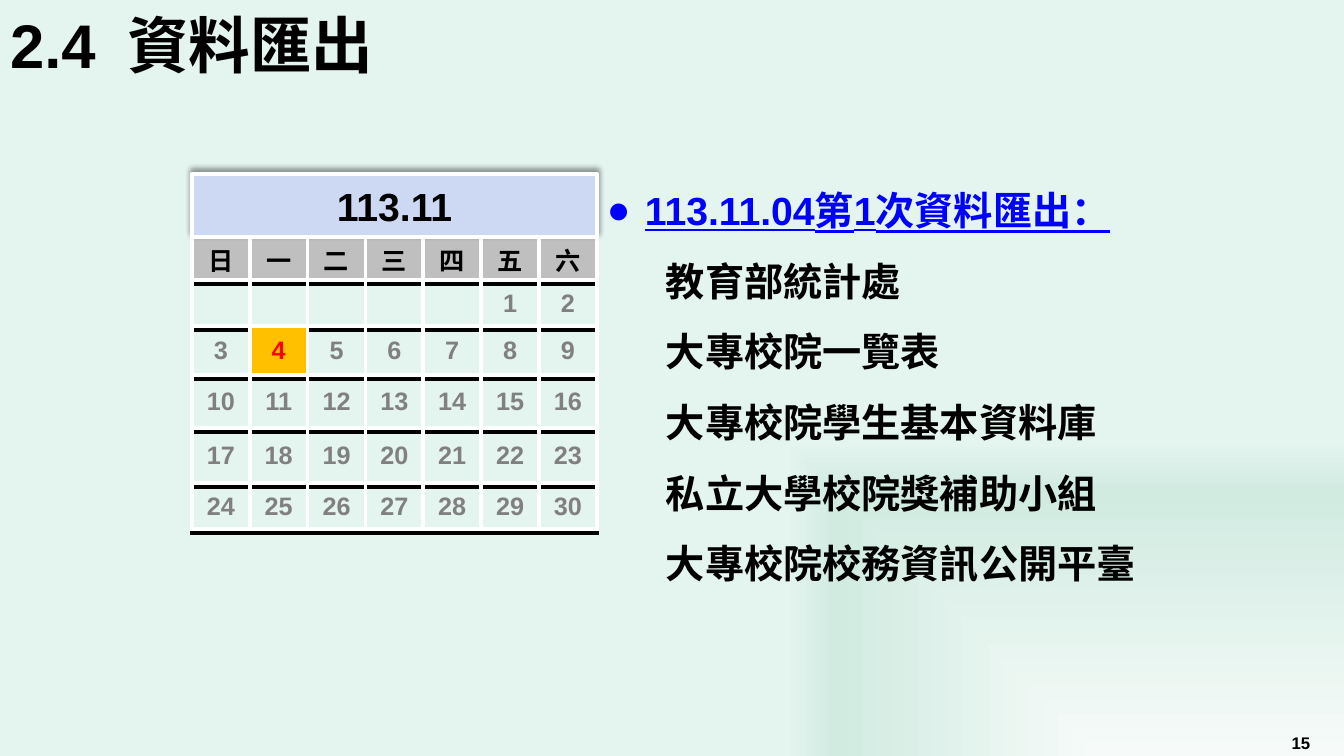
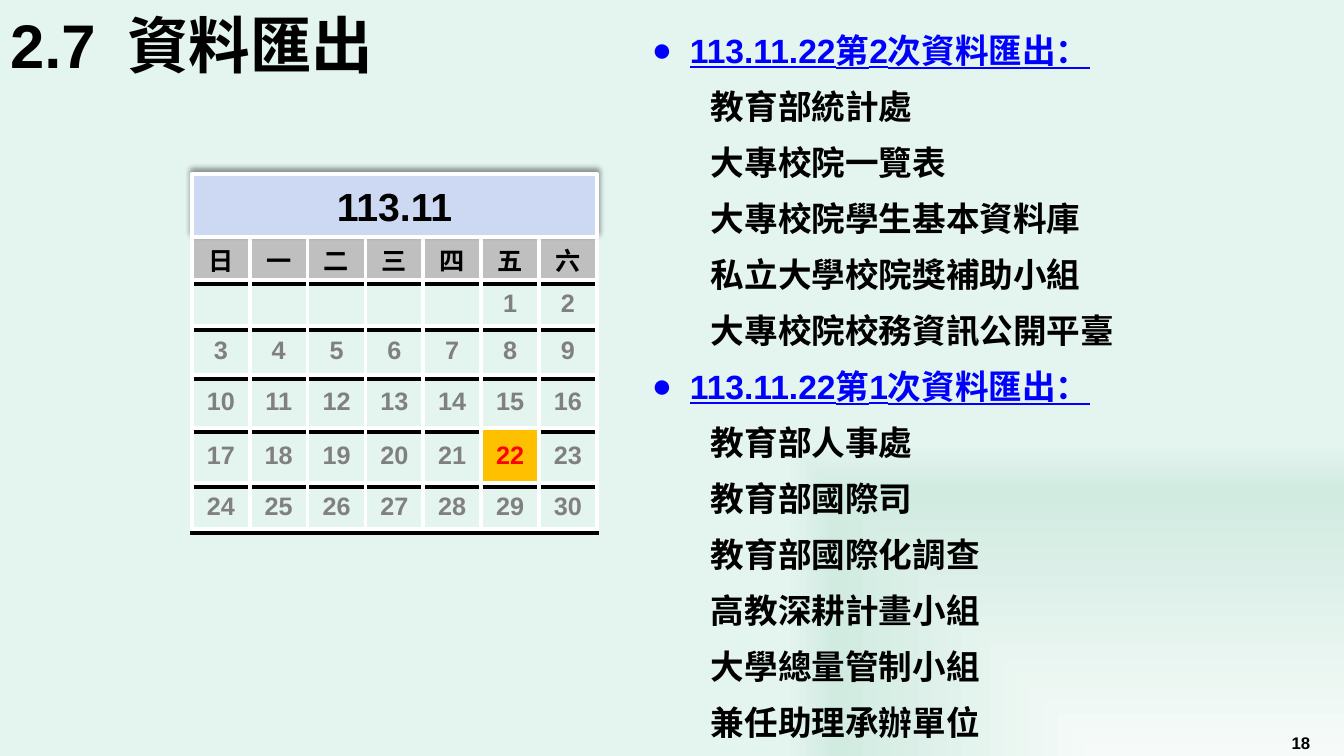
"""Build two export-schedule slides, each with a calendar and a list."""
import pptx
import pptx.dml.color
import pptx.enum.shapes
import pptx.enum.text
import pptx.oxml
import pptx.util

ALIGN = pptx.enum.text.PP_ALIGN
MIDDLE = pptx.enum.text.MSO_ANCHOR.MIDDLE
NS = 'xmlns:a="http://schemas.openxmlformats.org/drawingml/2006/main"'
UNIT = 914400 / 100.8


def px(num):
    return pptx.util.Emu(round(num * UNIT))


def tint(code):
    return pptx.dml.color.RGBColor.from_string(code)


def node(tag, attrs="", body=""):
    return pptx.oxml.parse_xml(f"<a:{tag} {NS} {attrs}>{body}</a:{tag}>")


def shade(blur, dist, angle, alpha):
    return node(
        "outerShdw",
        f'blurRad="{blur}" dist="{dist}" dir="{angle}" algn="t" rotWithShape="0"',
        f'<a:srgbClr val="000000"><a:alpha val="{alpha}"/></a:srgbClr>')


class Deck:
    LATIN, ASIAN = "Arial", "Noto Sans CJK SC"
    BLACK, WHITE, GREY = "000000", "FFFFFF", "808080"
    BLUE, RED, GOLD = "0000FF", "FF0000", "FFC000"
    HEAD, BANNER = "BFBFBF", "CDD9F3"
    STOPS = (0, "F6FBF9"), (70, "D1EBE1"), (83, "E4F4EF"), (100, "E4F4EF")

    def __init__(self):
        self.prs = pptx.Presentation()
        self.prs.slide_width, self.prs.slide_height = px(1344), px(756)
        self.slide = None
        self.paint()

    def paint(self):
        master = self.prs.slide_master
        master.background.fill.solid()
        back = master.element.xpath(".//p:bgPr")[0]
        back.remove(back[0])
        stops = "".join(
            f'<a:gs pos="{pos * 1000}"><a:srgbClr val="{code}"/></a:gs>'
            for pos, code in self.STOPS)
        back.insert(0, node(
            "gradFill", 'rotWithShape="1"',
            f'<a:gsLst>{stops}</a:gsLst><a:path path="rect">'
            '<a:fillToRect l="100000" t="100000" r="0" b="0"/></a:path>'))

    def style(self, para, size, color=BLACK, line=False):
        for run in para.runs:
            font = run.font
            font.name, font.size = self.LATIN, pptx.util.Pt(size)
            font.bold, font.underline = True, line
            font.color.rgb = tint(color)
            run._r.get_or_add_rPr().append(
                node("ea", f'typeface="{self.ASIAN}"'))

    def start(self, num, name, page):
        self.slide = self.prs.slides.add_slide(self.prs.slide_layouts[5])
        self.title(num, name)
        self.page(page)

    def title(self, num, name):
        shape = self.slide.shapes.title
        shape.left, shape.top = px(0), px(15)
        shape.width, shape.height = px(782), px(68)
        frame = shape.text_frame
        frame.text = f"{num}\t{name}"
        frame.word_wrap = True
        frame.auto_size = pptx.enum.text.MSO_AUTO_SIZE.NONE
        frame.vertical_anchor = MIDDLE
        para = frame.paragraphs[0]
        para.alignment, para.line_spacing = ALIGN.LEFT, 0.9
        para._p.get_or_add_pPr().append(
            node("tabLst", "", f'<a:tab pos="{px(117)}" algn="l"/>'))
        self.style(para, 44)

    def box(self, left, top, width, height):
        shape = self.slide.shapes.add_textbox(
            px(left), px(top), px(width), px(height))
        shape.text_frame.word_wrap = True
        return shape.text_frame

    def page(self, num):
        frame = self.box(1258, 728, 86, 28)
        frame.text = str(num)
        frame.paragraphs[0].alignment = ALIGN.CENTER
        self.style(frame.paragraphs[0], 12)

    def notes(self, place, size, space, groups):
        frame = self.box(*place)
        rows = [(text, not i) for group in groups
                for i, text in enumerate(group)]
        frame.text = "\n".join(text for text, _ in rows)
        for para, (_, head) in zip(frame.paragraphs, rows):
            para.line_spacing = space
            props = para._p.get_or_add_pPr()
            props.set("marL", str(px(38 if head else 59)))
            props.set("indent", str(px(-38 if head else 0)))
            if head:
                props.append(node("buFont", f'typeface="{self.LATIN}"'))
                props.append(node("buChar", 'char="●"'))
            self.style(para, size, self.BLUE if head else self.BLACK, head)

    def cell(self, cell, text, color, fill):
        cell.text = text
        cell.vertical_anchor = MIDDLE
        cell.margin_left = cell.margin_right = px(1)
        cell.margin_top, cell.margin_bottom = px(1), px(0)
        para = cell.text_frame.paragraphs[0]
        para.alignment = ALIGN.CENTER
        self.style(para, 18, color)
        props = cell._tc.get_or_add_tcPr()
        for side in "LRTB":
            props.append(node(
                f"ln{side}", f'w="{pptx.util.Pt(3)}"',
                f'<a:solidFill><a:srgbClr val="{self.WHITE}"/></a:solidFill>'))
        if fill:
            cell.fill.solid()
            cell.fill.fore_color.rgb = tint(fill)
        else:
            cell.fill.background()

    def month(self, name, first, days, mark):
        left, top, width = 192, 237, 405
        tall = 43, 46, 49, 53, 55, 46
        table = self.slide.shapes.add_table(
            len(tall), 7, px(left), px(top), px(width), px(sum(tall))).table
        table.first_row = table.horz_banding = False
        glow = node("effectLst")
        glow.append(shade(0, pptx.util.Pt(3), 5400000, 100000))
        table._tbl.tblPr.insert(0, glow)
        for col in table.columns:
            col.width = px(width) // 7
        for row, size in zip(table.rows, tall):
            row.height = px(size)
        for i, text in enumerate("日一二三四五六"):
            self.cell(table.cell(0, i), text, self.BLACK, self.HEAD)
        for i in range(7 * (len(tall) - 1)):
            day = i - first + 1
            text = str(day) if 1 <= day <= days else ""
            hit = day == mark
            self.cell(table.cell(i // 7 + 1, i % 7), text,
                      self.RED if hit else self.GREY,
                      self.GOLD if hit else None)
        self.banner(name, left, top - 63, width, 63)

    def banner(self, text, left, top, width, height):
        shape = self.slide.shapes.add_shape(
            pptx.enum.shapes.MSO_SHAPE.RECTANGLE,
            px(left), px(top), px(width), px(height))
        shape.fill.solid()
        shape.fill.fore_color.rgb = tint(self.BANNER)
        shape.line.color.rgb = tint(self.WHITE)
        shape.line.width = pptx.util.Pt(3)
        shape.shadow.inherit = False
        shape.element.xpath("./p:spPr/a:effectLst")[0].append(
            shade(pptx.util.Pt(4), pptx.util.Pt(3), 16200000, 40000))
        frame = shape.text_frame
        frame.text = text
        frame.vertical_anchor = MIDDLE
        frame.paragraphs[0].alignment = ALIGN.CENTER
        self.style(frame.paragraphs[0], 28)


def main():
    units = ["教育部統計處", "大專校院一覽表", "大專校院學生基本資料庫",
             "私立大學校院獎補助小組", "大專校院校務資訊公開平臺"]
    more = ["教育部人事處", "教育部國際司", "教育部國際化調查",
            "高教深耕計畫小組", "大學總量管制小組", "兼任助理承辦單位"]
    slides = [
        ("2.4", 15, 4, (597, 158, 560, 437), 28, 1.5,
         [["113.11.04第1次資料匯出：", *units]]),
        ("2.7", 18, 22, (642, 9, 530, 739), 24, pptx.util.Pt(40),
         [["113.11.22第2次資料匯出：", *units],
          ["113.11.22第1次資料匯出：", *more]]),
    ]
    deck = Deck()
    for num, page, mark, place, size, space, groups in slides:
        deck.start(num, "資料匯出", page)
        deck.notes(place, size, space, groups)
        deck.month("113.11", 5, 30, mark)
    deck.prs.save("out.pptx")


if __name__ == "__main__":
    main()
